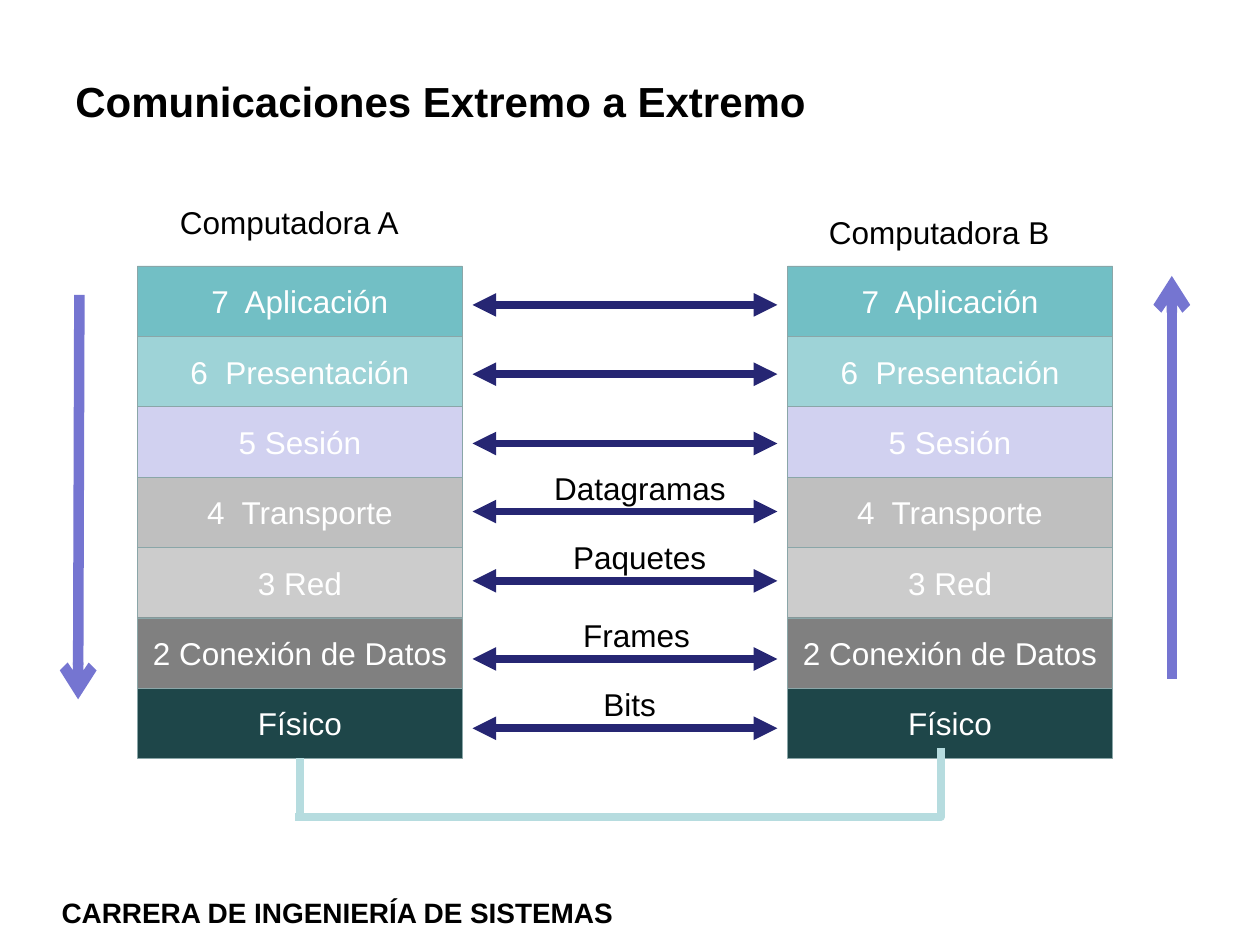
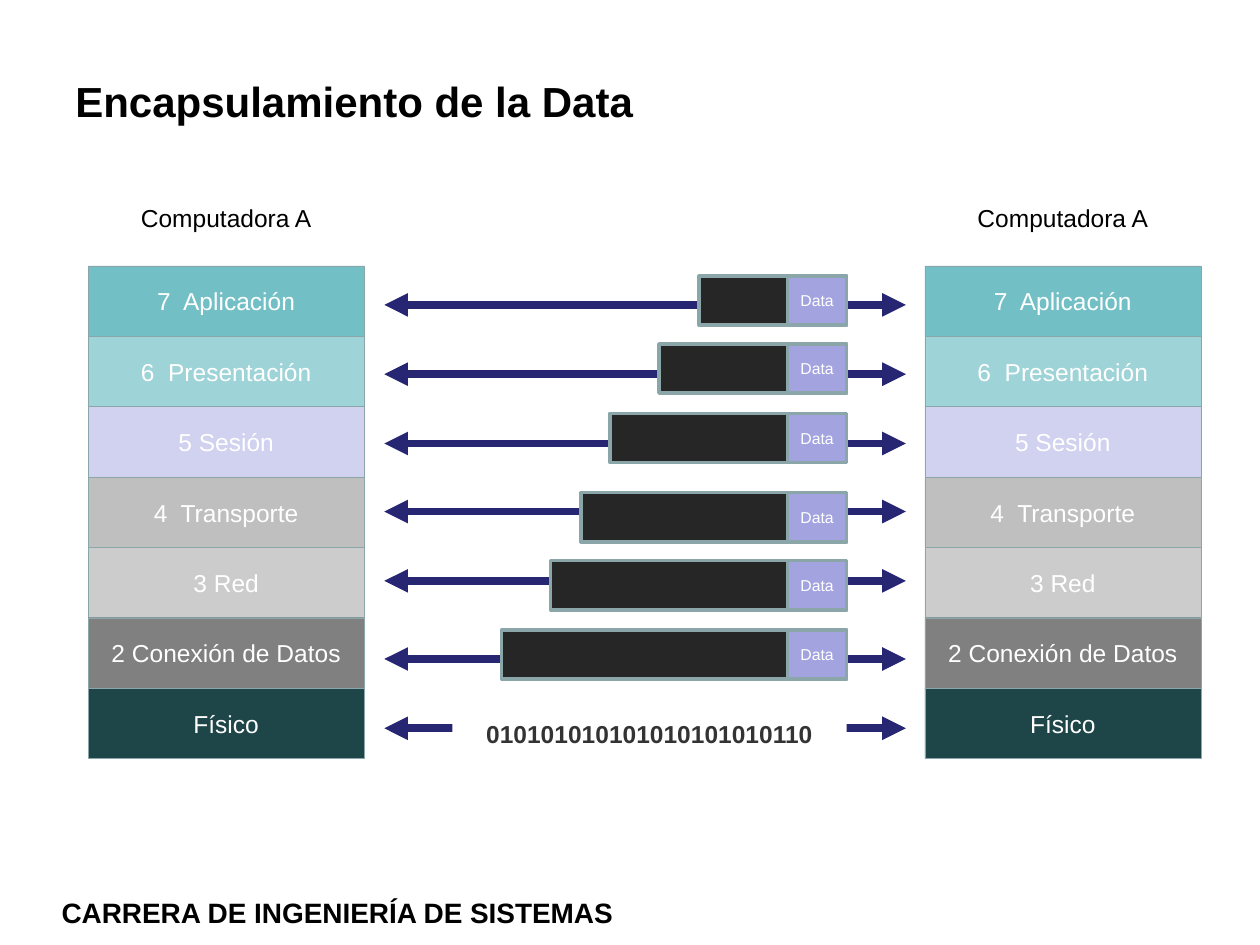
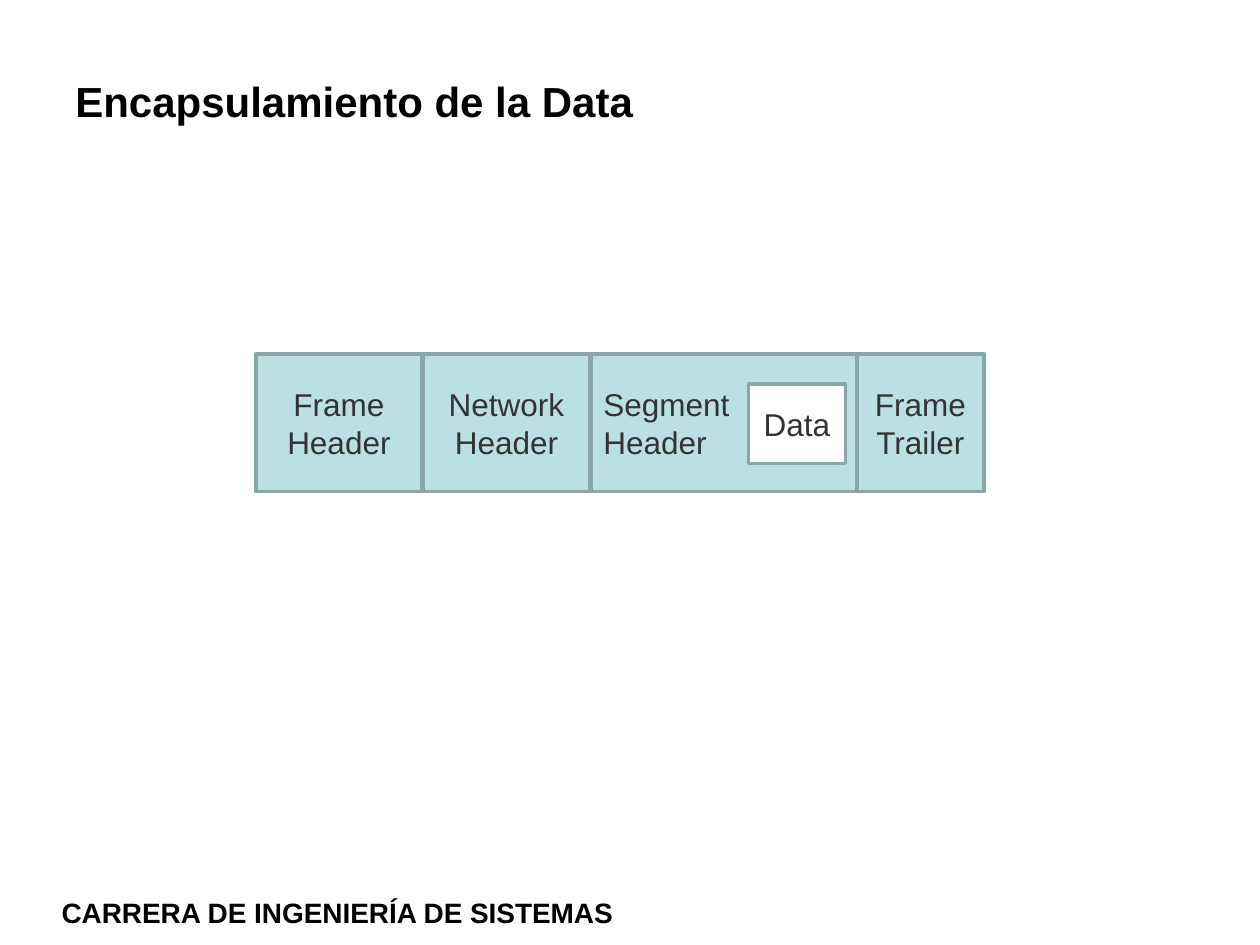
"""Build three slides on end-to-end layers and data encapsulation."""
from dataclasses import dataclass

from lxml import etree
from pptx import Presentation
from pptx.dml.color import RGBColor
from pptx.enum.shapes import MSO_CONNECTOR, MSO_SHAPE
from pptx.enum.text import MSO_ANCHOR, PP_ALIGN
from pptx.oxml.ns import qn
from pptx.shapes.autoshape import Shape
from pptx.shapes.connector import Connector
from pptx.slide import Slide
from pptx.util import Inches, Pt

RECTANGLE = MSO_SHAPE.RECTANGLE
STRAIGHT = MSO_CONNECTOR.STRAIGHT
ELBOW = MSO_CONNECTOR.ELBOW
LEFT = PP_ALIGN.LEFT
CENTER = PP_ALIGN.CENTER
TOP = MSO_ANCHOR.TOP
MIDDLE = MSO_ANCHOR.MIDDLE


@dataclass(frozen=True)
class Theme:
    """Fonts, type sizes, line widths and colours of the deck."""
    font: str = "Arial"
    title: int = 24
    body: int = 18
    footer: int = 16
    small: int = 14
    tiny: int = 9
    hairline: float = 0.25
    border: float = 2
    arrow: float = 4.5
    flow: float = 6
    black: str = "000000"
    white: str = "FFFFFF"
    text: str = "333333"
    outline: str = "8AA6A8"
    navy: str = "262673"
    violet: str = "7575D1"
    cable: str = "B6DCDF"
    header: str = "262626"
    data: str = "A3A3E0"
    field: str = "BBE0E3"


@dataclass(frozen=True)
class Frame:
    """A place on the slide, in inches."""
    left: float
    top: float
    width: float
    height: float

    def lengths(self) -> tuple:
        """Return the four values as lengths."""
        return tuple(map(Inches, (self.left, self.top, self.width, self.height)))


@dataclass(frozen=True)
class Style:
    """The look of a piece of text."""
    size: int
    color: str
    bold: bool = False
    align: int = CENTER
    anchor: int = MIDDLE
    wrap: bool = True


@dataclass(frozen=True)
class Layer:
    """One layer of the network model."""
    name: str
    fill: str


@dataclass(frozen=True)
class Field:
    """One field of the frame diagram."""
    lines: tuple
    frame: Frame
    fill: str
    align: int = CENTER


THEME = Theme()
TITLE = Style(THEME.title, THEME.black, True, LEFT, TOP)
FOOTER = Style(THEME.footer, THEME.black, True, LEFT, TOP)
LABEL = Style(THEME.body, THEME.black, False, LEFT, TOP, False)
SMALL_LABEL = Style(THEME.small, THEME.black, False, LEFT, TOP)

LAYERS = (
    Layer("7  Aplicación", "72BFC5"),
    Layer("6  Presentación", "9ED3D7"),
    Layer("5 Sesión", "D1D1F0"),
    Layer("4  Transporte", "BFBFBF"),
    Layer("3 Red", "CCCCCC"),
    Layer("2 Conexión de Datos", "808080"),
    Layer("Físico", "1E4649"),
)
STACK_TOP = 2.11
STACK_HEIGHT = 3.91
ARROW_LEVELS = (2.42, 2.97, 3.52, 4.06, 4.61, 5.23, 5.78)

UNIT_LABELS = (
    ("Computadora A", Frame(1.33, 1.56, 1.96, 0.4)),
    ("Computadora B", Frame(6.48, 1.64, 1.97, 0.4)),
    ("Bits", Frame(4.69, 5.39, 0.62, 0.4)),
    ("Frames", Frame(4.53, 4.84, 1.06, 0.4)),
    ("Paquetes", Frame(4.45, 4.22, 1.27, 0.4)),
    ("Datagramas", Frame(4.3, 3.67, 1.58, 0.4)),
)

PACKETS = ((5.55, 2.19), (5.23, 2.73), (4.84, 3.28), (4.61, 3.91), (4.37, 4.45), (3.98, 5))
PACKET_RIGHT = 6.72
PACKET_HEIGHT = 0.39
DATA_WIDTH = 0.47

FIELDS = (
    Field(("Segment", "Header"), Frame(4.69, 2.81, 2.11, 1.09), THEME.field, LEFT),
    Field(("Frame Trailer",), Frame(6.8, 2.81, 1.01, 1.09), THEME.field),
    Field(("Data",), Frame(5.94, 3.05, 0.77, 0.63), THEME.white),
    Field(("Network", "Header"), Frame(3.36, 2.81, 1.32, 1.09), THEME.field),
    Field(("Frame", "Header"), Frame(2.03, 2.81, 1.32, 1.09), THEME.field),
)


def write(box: Shape, lines: tuple, style: Style) -> None:
    """Fill a box with one paragraph per line."""
    text_frame = box.text_frame
    text_frame.word_wrap = style.wrap
    text_frame.vertical_anchor = style.anchor
    formats = {"name": THEME.font, "size": Pt(style.size), "bold": style.bold}
    for index, line in enumerate(lines):
        para = text_frame.add_paragraph() if index else text_frame.paragraphs[0]
        para.alignment = style.align
        span = para.add_run()
        span.text = line
        for name, value in formats.items():
            setattr(span.font, name, value)
        span.font.color.rgb = RGBColor.from_string(style.color)


def add_text(page: Slide, text: str, frame: Frame, style: Style) -> None:
    """Add a text box."""
    write(page.shapes.add_textbox(*frame.lengths()), (text,), style)


def add_block(page: Slide, frame: Frame, fill: str, border: float = 0,
              lines: tuple = (), style: Style | None = None) -> None:
    """Add a filled rectangle, with a border and text if given."""
    box = page.shapes.add_shape(RECTANGLE, *frame.lengths())
    box.shadow.inherit = False
    box.fill.solid()
    box.fill.fore_color.rgb = RGBColor.from_string(fill)
    if border:
        box.line.color.rgb = RGBColor.from_string(THEME.outline)
        box.line.width = Pt(border)
    else:
        box.line.fill.background()
    if style:
        write(box, lines, style)


def add_line(page: Slide, start: tuple, end: tuple, color: str, width: float,
             head: str = "", tail: str = "", kind: int = STRAIGHT) -> Connector:
    """Add a connector with optional arrowheads."""
    line = page.shapes.add_connector(kind, *map(Inches, start + end))
    line.line.color.rgb = RGBColor.from_string(color)
    line.line.width = Pt(width)
    stroke = line.line._get_or_add_ln()
    for tag, arrowhead in (("a:headEnd", head), ("a:tailEnd", tail)):
        if arrowhead:
            etree.SubElement(stroke, qn(tag), type=arrowhead)
    etree.SubElement(line._element.spPr, qn("a:effectLst"))
    return line


def add_cable(page: Slide) -> None:
    """Join the physical layers of both computers below the stacks."""
    add_line(page, (2.38, 6.02), (2.38, 6.49), THEME.cable, THEME.arrow)
    bend = add_line(page, (4.63, 3.65), (5.18, 8.77), THEME.cable, THEME.arrow, kind=ELBOW)
    properties = bend._element.spPr
    properties.find(qn("a:xfrm")).set("rot", "5400000")
    properties.find(qn("a:prstGeom")).set("prst", "bentConnector2")


def add_stack(page: Slide, left: float, width: float, size: int) -> None:
    """Add the seven layers from top to bottom."""
    height = STACK_HEIGHT / len(LAYERS)
    for index, layer in enumerate(LAYERS):
        frame = Frame(left, STACK_TOP + index * height, width, height)
        add_block(page, frame, layer.fill, THEME.hairline, (layer.name,), Style(size, THEME.white))


def add_peer_arrows(page: Slide, left: float, right: float) -> None:
    """Link each layer with its peer."""
    for level in ARROW_LEVELS:
        add_line(page, (left, level), (right, level), THEME.navy, THEME.arrow,
                 "triangle", "triangle")


def add_page(deck: Presentation, title: str) -> Slide:
    """Add a blank slide with its title and footer."""
    page = deck.slides.add_slide(deck.slide_layouts[6])
    add_text(page, "CARRERA DE INGENIERÍA DE SISTEMAS", Frame(0.39, 7.06, 5.08, 0.37), FOOTER)
    add_text(page, title, Frame(0.5, 0.55, 6.14, 0.7), TITLE)
    return page


def build_end_to_end(deck: Presentation) -> None:
    """Show both stacks and the units they exchange."""
    page = add_page(deck, "Comunicaciones Extremo a Extremo")
    add_peer_arrows(page, 3.75, 6.17)
    for left in (1.09, 6.25):
        add_stack(page, left, 2.58, THEME.body)
    add_line(page, (0.63, 2.34), (0.62, 5.55), THEME.violet, THEME.flow, tail="arrow")
    add_line(page, (9.3, 2.19), (9.3, 5.39), THEME.violet, THEME.flow, head="arrow")
    add_cable(page)
    for text, frame in UNIT_LABELS:
        add_text(page, text, frame, LABEL)


def build_encapsulation(deck: Presentation) -> None:
    """Show the headers growing layer by layer."""
    page = add_page(deck, "Encapsulamiento de la Data")
    add_peer_arrows(page, 3.05, 7.19)
    for left in (0.7, 7.34):
        add_stack(page, left, 2.19, THEME.small)
        add_text(page, "Computadora A", Frame(left + 0.32, 1.56, 1.66, 0.34), SMALL_LABEL)
    for left, top in PACKETS:
        add_block(page, Frame(left, top, PACKET_RIGHT - left, PACKET_HEIGHT),
                  THEME.header, THEME.border)
        add_block(page, Frame(PACKET_RIGHT - DATA_WIDTH, top, DATA_WIDTH, PACKET_HEIGHT),
                  THEME.data, THEME.border, ("Data",), Style(THEME.tiny, THEME.white))
    add_block(page, Frame(3.59, 5.63, 3.13, PACKET_HEIGHT), THEME.white,
              lines=("010101010101010101010110",), style=Style(THEME.small, THEME.text, True))


def build_frame_fields(deck: Presentation) -> None:
    """Show the fields of one frame."""
    page = add_page(deck, "Encapsulamiento de la Data")
    for field in FIELDS:
        add_block(page, field.frame, field.fill, THEME.border, field.lines,
                  Style(THEME.body, THEME.text, align=field.align))


def main() -> None:
    """Build and save the deck."""
    deck = Presentation()
    deck.slide_width = Inches(10)
    deck.slide_height = Inches(7.5)
    build_end_to_end(deck)
    build_encapsulation(deck)
    build_frame_fields(deck)
    deck.save("out.pptx")


if __name__ == "__main__":
    main()
